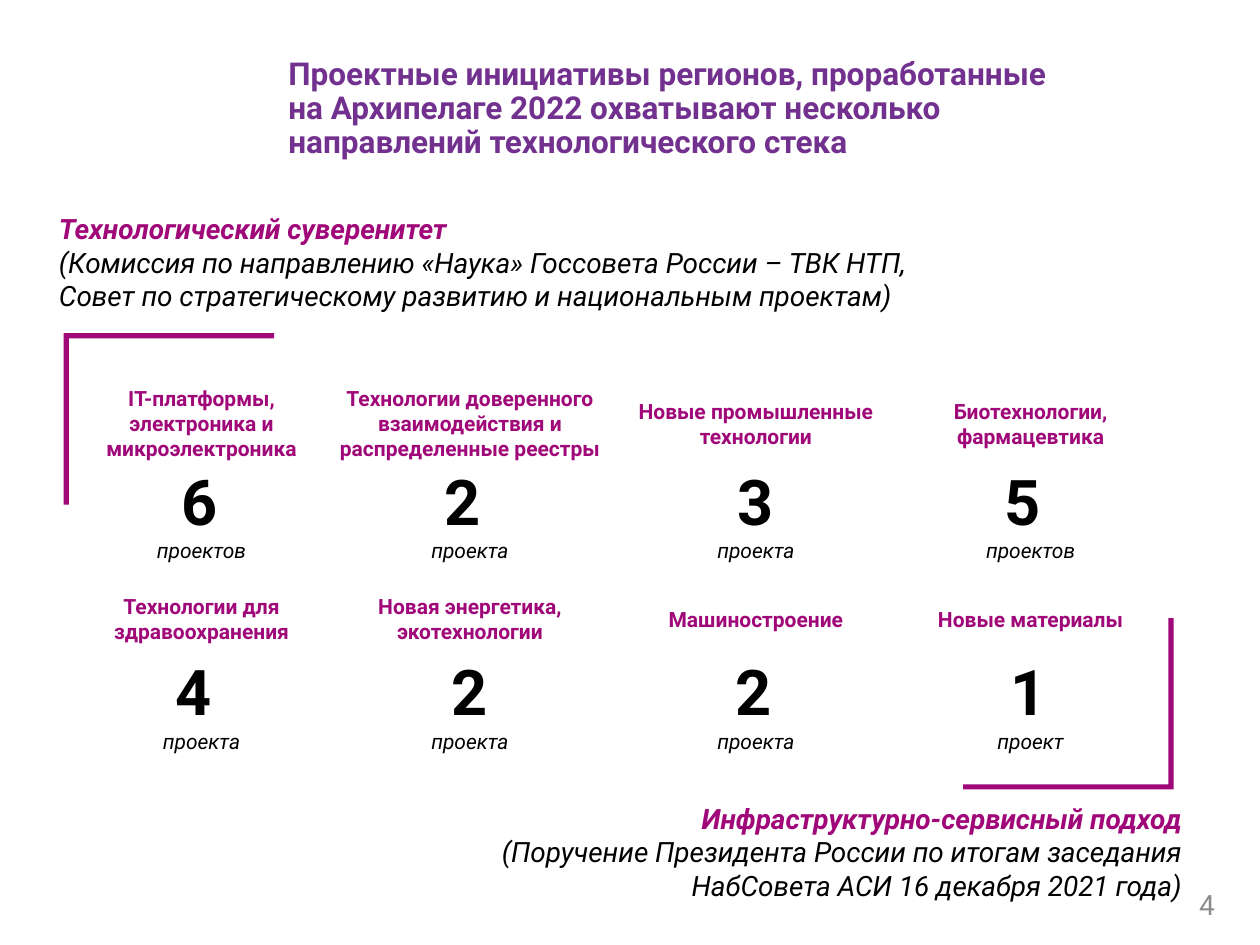
from pptx import Presentation
from pptx.dml.color import RGBColor
from pptx.enum.shapes import MSO_SHAPE
from pptx.enum.text import MSO_ANCHOR, PP_ALIGN
from pptx.util import Inches, Pt

FONT = "Roboto"
PURPLE = RGBColor(0x72, 0x31, 0x8F)
MAGENTA = RGBColor(0xA0, 0x07, 0x78)
BLACK = RGBColor(0, 0, 0)
GRAY = RGBColor(0x8C, 0x8C, 0x8C)

COLUMN_CENTERS = (1.6, 3.73, 6, 8.18)
LABEL_CENTERS = (3.36, 4.91)
COUNT_TOPS = (3.62, 5.13)
# Per direction: label, label width, count, size of the space after it, unit
DIRECTIONS = (
    (
        ("IT-платформы,\nэлектроника и микроэлектроника", 2.13, "6", 11, "проектов"),
        ("Технологии доверенного взаимодействия и распределенные реестры",
         2.42, "2", 36, "проекта"),
        ("Новые промышленные технологии", 2.13, "3", None, "проекта"),
        ("Биотехнологии, фармацевтика", 2.01, "5", 36, "проектов"),
    ),
    (
        ("Технологии для здравоохранения", 1.72, "4", 36, "проекта"),
        ("Новая энергетика, экотехнологии", 1.81, "2", None, "проекта"),
        ("Машиностроение", 2.13, "2", 11, "проекта"),
        ("Новые материалы", 2.13, "1", 11, "проект"),
    ),
)


def add_text_frame(slide, x, y, w, h, anchor=MSO_ANCHOR.TOP):
    sp = slide.shapes.add_textbox(Inches(x), Inches(y), Inches(w), Inches(h))
    tf = sp.text_frame
    tf.word_wrap = True
    tf.vertical_anchor = anchor
    return tf


def add_run(p, text, size, color, bold=False, italic=False):
    r = p.add_run()
    r.text = text
    r.font.name = FONT
    r.font.size = Pt(size)
    r.font.color.rgb = color
    r.font.bold = bold
    r.font.italic = italic


def add_title(slide, x, y, w, h):
    p = add_text_frame(slide, x, y, w, h, MSO_ANCHOR.MIDDLE).paragraphs[0]
    p.line_spacing = 0.9
    add_run(p, "Проектные инициативы регионов, проработанные на Архипелаге 2022 "
               "охватывают несколько направлений технологического стека",
            18, PURPLE, bold=True)


def add_approach(slide, x, y, w, h, heading, basis, align):
    p = add_text_frame(slide, x, y, w, h).paragraphs[0]
    p.alignment = align
    add_run(p, heading, 16, MAGENTA, bold=True, italic=True)
    p.add_line_break()
    add_run(p, basis, 16, BLACK, italic=True)


def add_corner(slide, x, y, w, h, rotation):
    sp = slide.shapes.add_shape(MSO_SHAPE.CORNER, Inches(x), Inches(y),
                                Inches(w), Inches(h))
    sp.adjustments[0] = 0.03
    sp.adjustments[1] = 0.03
    sp.rotation = rotation
    sp.shadow.inherit = False
    sp.fill.solid()
    sp.fill.fore_color.rgb = MAGENTA
    sp.line.fill.background()


def add_label(slide, center_x, center_y, w, text):
    h = 0.71
    tf = add_text_frame(slide, center_x - w / 2, center_y - h / 2, w, h,
                        MSO_ANCHOR.MIDDLE)
    for i, line in enumerate(text.split("\n")):
        p = tf.add_paragraph() if i else tf.paragraphs[0]
        p.alignment = PP_ALIGN.CENTER
        add_run(p, line, 12, MAGENTA, bold=True)


def add_count(slide, center_x, y, count, space_size, unit):
    w = 1.43
    p = add_text_frame(slide, center_x - w / 2, y, w, 0.91).paragraphs[0]
    p.alignment = PP_ALIGN.CENTER
    add_run(p, count, 36, BLACK, bold=True)
    if space_size:
        add_run(p, " ", space_size, BLACK, bold=True)
    p.add_line_break()
    add_run(p, unit, 12, BLACK, italic=True)


def add_directions(slide):
    for row, label_y, count_y in zip(DIRECTIONS, LABEL_CENTERS, COUNT_TOPS):
        for center_x, (label, w, count, space_size, unit) in zip(COLUMN_CENTERS, row):
            add_label(slide, center_x, label_y, w, label)
            add_count(slide, center_x, count_y, count, space_size, unit)


def add_page_number(slide, x, y, w, h):
    p = add_text_frame(slide, x, y, w, h, MSO_ANCHOR.MIDDLE).paragraphs[0]
    p.alignment = PP_ALIGN.RIGHT
    add_run(p, "4", 16, GRAY)


def main():
    prs = Presentation()
    prs.slide_width = Inches(10)
    prs.slide_height = Inches(7.5)
    slide = prs.slides.add_slide(prs.slide_layouts[6])
    add_title(slide, 2.19, 0.36, 6.5, 1.01)
    add_approach(slide, 0.37, 1.63, 7.16, 0.91, "Технологический суверенитет",
                 "(Комиссия по направлению «Наука» Госсовета России – ТВК НТП, "
                 "Совет по стратегическому развитию и национальным проектам)",
                 PP_ALIGN.LEFT)
    add_approach(slide, 3.73, 6.31, 5.75, 0.91, "Инфраструктурно-сервисный подход",
                 "(Поручение Президента России по итогам заседания "
                 "НабСовета АСИ 16 декабря 2021 года)", PP_ALIGN.RIGHT)
    add_corner(slide, 0.66, 2.49, 1.36, 1.67, 90)
    add_corner(slide, 7.8, 4.75, 1.36, 1.67, 270)
    add_directions(slide)
    add_page_number(slide, 7.49, 6.98, 2.25, 0.4)
    prs.save("out.pptx")


if __name__ == "__main__":
    main()
